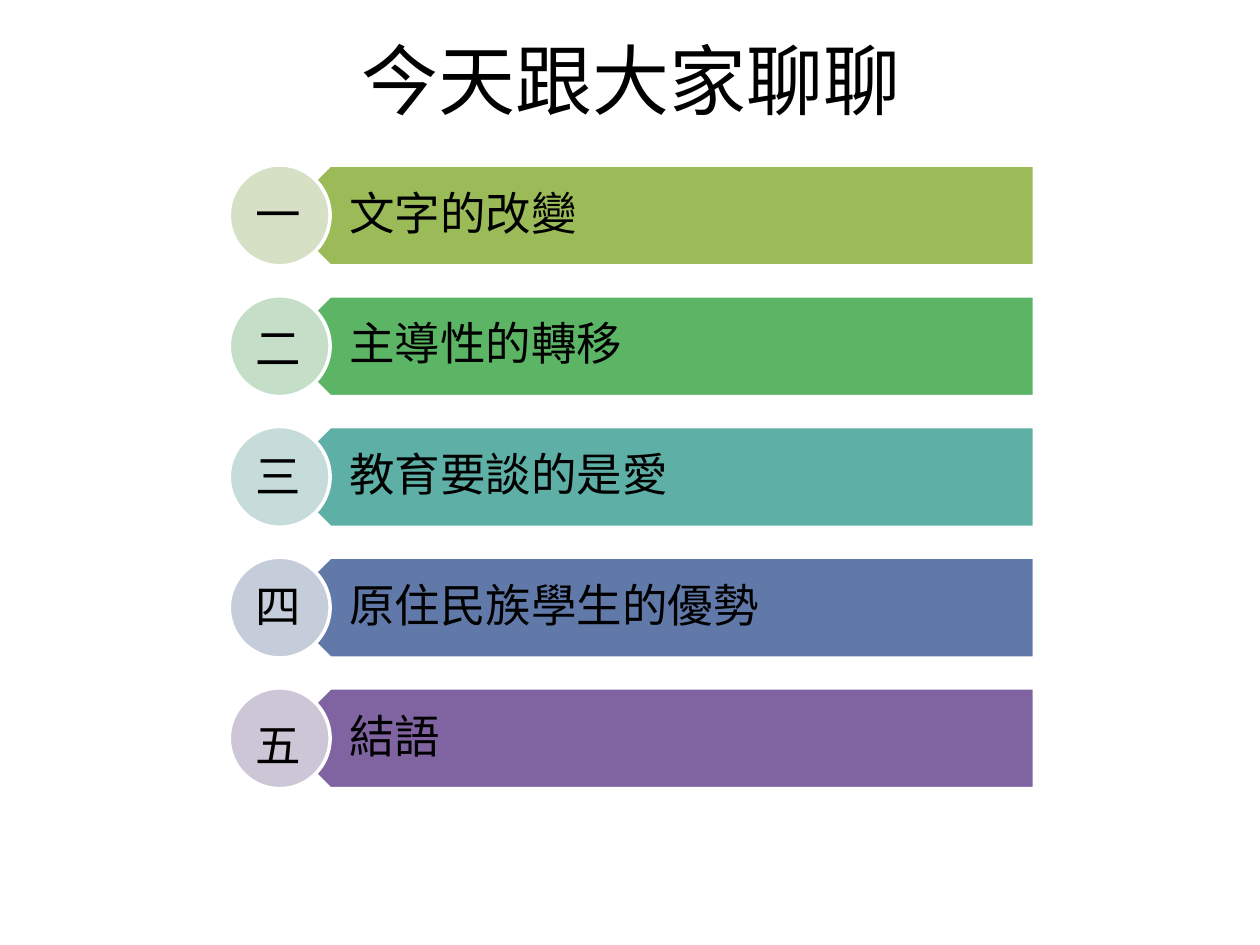
from lxml.etree import SubElement
from pptx import Presentation
from pptx.dml.color import RGBColor
from pptx.enum.shapes import MSO_SHAPE
from pptx.enum.text import MSO_ANCHOR, MSO_AUTO_SIZE, PP_ALIGN
from pptx.oxml.ns import qn
from pptx.util import Inches, Pt

FONT = "Noto Sans CJK SC"
COLORS = {
    "text": "000000",
    "line": "FFFFFF",
    "bars": ["9BBB59", "5CB565", "5EAFA6", "6179A8", "8064A2"],
    "circles": ["D5E0C4", "C4DEC8", "C5DCDA", "C5CCDA", "CDC6D7"],
}
TOPICS = [
    ("一", "文字的改變", 1.43),
    ("二", "主導性的轉移", 2.49),
    ("三", "教育要談的是愛", 3.51),
    ("四", "原住民族學生的優勢", 4.54),
    ("五", "結語", 5.64),
]
FIRST_TOP, LAST_TOP = 1.31, 5.46
ROW_H = 0.8
PITCH = (LAST_TOP - FIRST_TOP) / (len(TOPICS) - 1)


def add_run(p, text, size):
    r = p.add_run()
    r.text = text
    r.font.size = Pt(size)
    r.font.name = FONT
    r.font.color.rgb = RGBColor.from_string(COLORS["text"])
    SubElement(r.font._element, qn("a:ea")).set("typeface", FONT)


def add_title(slide, text):
    sp = slide.shapes.title
    sp.left, sp.top = Inches(0.51), Inches(0)
    sp.width, sp.height = Inches(9), Inches(1.25)
    tf = sp.text_frame
    tf.vertical_anchor = MSO_ANCHOR.MIDDLE
    p = tf.paragraphs[0]
    p.alignment = PP_ALIGN.CENTER
    add_run(p, text, 44)


def add_outlined_shape(slide, kind, left, top, width, fill):
    sp = slide.shapes.add_shape(
        kind, Inches(left), Inches(top), Inches(width), Inches(ROW_H))
    sp.shadow.inherit = False
    sp.fill.solid()
    sp.fill.fore_color.rgb = RGBColor.from_string(fill)
    sp.line.color.rgb = RGBColor.from_string(COLORS["line"])
    sp.line.width = Pt(2)
    return sp


def add_label(slide, top, text):
    sp = slide.shapes.add_textbox(
        Inches(2.42), Inches(top), Inches(5.79), Inches(ROW_H))
    tf = sp.text_frame
    tf.word_wrap = True
    tf.vertical_anchor = MSO_ANCHOR.MIDDLE
    tf.margin_left, tf.margin_right = Inches(0.35), Inches(0.2)
    tf.margin_top = tf.margin_bottom = Inches(0.11)
    p = tf.paragraphs[0]
    p.line_spacing = 0.9
    p.space_after = Pt(9)
    add_run(p, text, 26)


def add_numeral(slide, top, text):
    sp = slide.shapes.add_textbox(
        Inches(1.93), Inches(top), Inches(0.59), Inches(0.54))
    tf = sp.text_frame
    tf.word_wrap = True
    tf.auto_size = MSO_AUTO_SIZE.SHAPE_TO_FIT_TEXT
    add_run(tf.paragraphs[0], text, 26)


def main():
    prs = Presentation()
    prs.slide_width, prs.slide_height = Inches(10), Inches(7.5)
    slide = prs.slides.add_slide(prs.slide_layouts[5])
    add_title(slide, "今天跟大家聊聊")
    for i, (numeral, topic, numeral_top) in enumerate(TOPICS):
        top = FIRST_TOP + i * PITCH
        bar = add_outlined_shape(
            slide, MSO_SHAPE.PENTAGON, 2.22, top, 5.99, COLORS["bars"][i])
        bar.rotation = 180
        add_label(slide, top, topic)
        add_outlined_shape(
            slide, MSO_SHAPE.OVAL, 1.82, top, ROW_H, COLORS["circles"][i])
        add_numeral(slide, numeral_top, numeral)
    prs.save("out.pptx")


if __name__ == "__main__":
    main()
